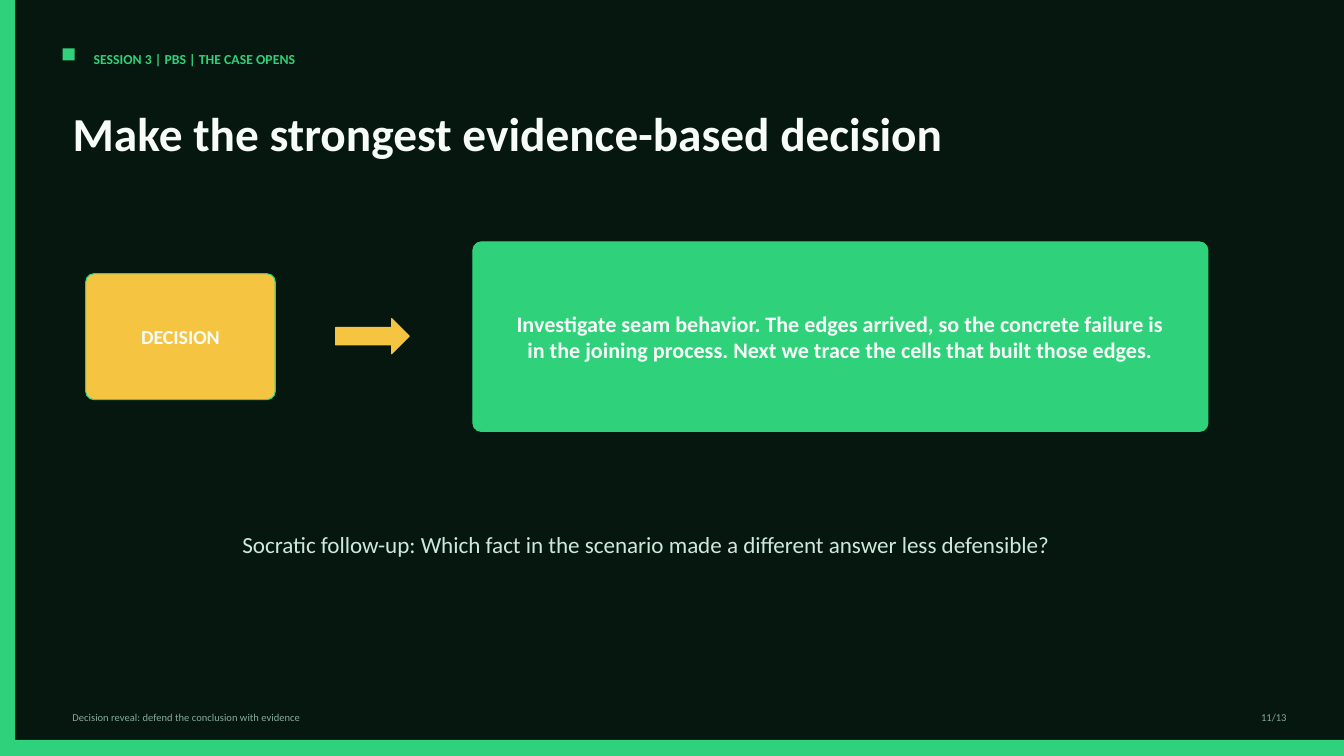
import pptx
import pptx.util
import pptx.dml.color
import pptx.enum.shapes
import pptx.enum.text

Inches = pptx.util.Inches
SHAPE = pptx.enum.shapes.MSO_SHAPE
ALIGN = pptx.enum.text.PP_ALIGN
ANCHOR = pptx.enum.text.MSO_ANCHOR

COLORS = {
    "bg": "06170F",
    "green": "2FD27A",
    "gold": "F5C542",
    "white": "F7FCF9",
    "mint": "CDE9DA",
    "muted": "87AB9A",
}
WIDTH, HEIGHT = 13.33, 7.5


def rgb(name):
    """Return the palette colour with this name."""
    return pptx.dml.color.RGBColor.from_string(COLORS[name])


def write(sp, text, size, color, bold=False, align=ALIGN.LEFT,
          anchor=ANCHOR.TOP, inset=0.1):
    """Put one formatted run of text into a shape and return its paragraph."""
    tf = sp.text_frame
    tf.word_wrap = True
    tf.auto_size = pptx.enum.text.MSO_AUTO_SIZE.NONE
    tf.vertical_anchor = anchor
    tf.margin_left = tf.margin_right = Inches(inset)
    p = tf.paragraphs[0]
    p.alignment = align
    r = p.add_run()
    r.text = text
    r.font.name = "Calibri"
    r.font.size = pptx.util.Pt(size)
    r.font.bold = bold
    r.font.color.rgb = rgb(color)
    return p


def add_text(s, x, y, w, h, text, size, color, **style):
    """Add a text box."""
    sp = s.shapes.add_textbox(Inches(x), Inches(y), Inches(w), Inches(h))
    write(sp, text, size, color, **style)


def add_block(s, kind, x, y, w, h, fill, line=None):
    """Add a filled shape with an optional thin outline."""
    sp = s.shapes.add_shape(kind, Inches(x), Inches(y), Inches(w), Inches(h))
    sp.shadow.inherit = False
    sp.fill.solid()
    sp.fill.fore_color.rgb = rgb(fill)
    if line:
        sp.line.color.rgb = rgb(line)
        sp.line.width = pptx.util.Pt(0.75)
    else:
        sp.line.fill.background()
    return sp


def add_card(s, x, y, w, h, fill, text, size):
    """Add a rounded card with centred bold text."""
    sp = add_block(s, SHAPE.ROUNDED_RECTANGLE, x, y, w, h, fill, "green")
    sp.adjustments[0] = 0.083 / min(w, h)
    write(sp, text, size, "white", bold=True, align=ALIGN.CENTER,
          anchor=ANCHOR.MIDDLE, inset=0.33)


def add_frame(s, w, h):
    """Paint the background and the bars on the left and bottom edges."""
    s.background.fill.solid()
    s.background.fill.fore_color.rgb = rgb("bg")
    add_block(s, SHAPE.RECTANGLE, 0, 0, 0.15, h, "green")
    add_block(s, SHAPE.RECTANGLE, 0, h - 0.16, w, 0.16, "green")


def add_header(s, x, y, w, eyebrow, title):
    """Place the marker, the session line and the title."""
    add_block(s, SHAPE.RECTANGLE, x, y + 0.03, 0.12, 0.12, "green")
    add_text(s, x + 0.21, y, 6.46, 0.25, eyebrow, 9.8, "green", bold=True)
    sp = s.shapes.title
    sp.left, sp.top = Inches(x), Inches(y + 0.59)
    sp.width, sp.height = Inches(w), Inches(0.88)
    p = write(sp, title, 33.8, "white", bold=True)
    p.line_spacing = 0.92


def add_decision(s, x, y, w, h, label, verdict):
    """Place the label card, the arrow and the verdict card on one midline."""
    mid = y + h / 2
    card_w = 7.29
    add_card(s, x, mid - 0.625, 1.88, 1.25, "gold", label, 14.2)
    add_block(s, SHAPE.RIGHT_ARROW, x + 2.48, mid - 0.18, 0.73, 0.35,
              "gold", "gold")
    add_card(s, x + w - card_w, y, card_w, h, "green", verdict, 15.8)


def add_footer(s, x, y, w, note, page):
    """Place the note on the left and the page count on the right."""
    page_w = 0.83
    add_text(s, x, y, 9.38, 0.19, note, 7.5, "muted")
    add_text(s, x + w - page_w, y, page_w, 0.19, page, 7.5, "muted",
             align=ALIGN.RIGHT)


def main():
    """Build and save the decision slide."""
    prs = pptx.Presentation()
    prs.slide_width, prs.slide_height = Inches(WIDTH), Inches(HEIGHT)
    s = prs.slides.add_slide(prs.slide_layouts[5])
    add_frame(s, WIDTH, HEIGHT)
    add_header(s, 0.62, 0.45, 11.46, "SESSION 3 | PBS | THE CASE OPENS",
               "Make the strongest evidence-based decision")
    add_decision(s, 0.85, 2.4, 11.13, 1.88, "DECISION",
                 "Investigate seam behavior. The edges arrived, so the "
                 "concrete failure is in the joining process. Next we trace "
                 "the cells that built those edges.")
    add_text(s, 0.99, 5.21, 10.83, 0.44,
             "Socratic follow-up: Which fact in the scenario made a "
             "different answer less defensible?",
             16.5, "mint", align=ALIGN.CENTER)
    add_footer(s, 0.62, 7, 12.24,
               "Decision reveal: defend the conclusion with evidence", "11/13")
    prs.save("out.pptx")


if __name__ == "__main__":
    main()
